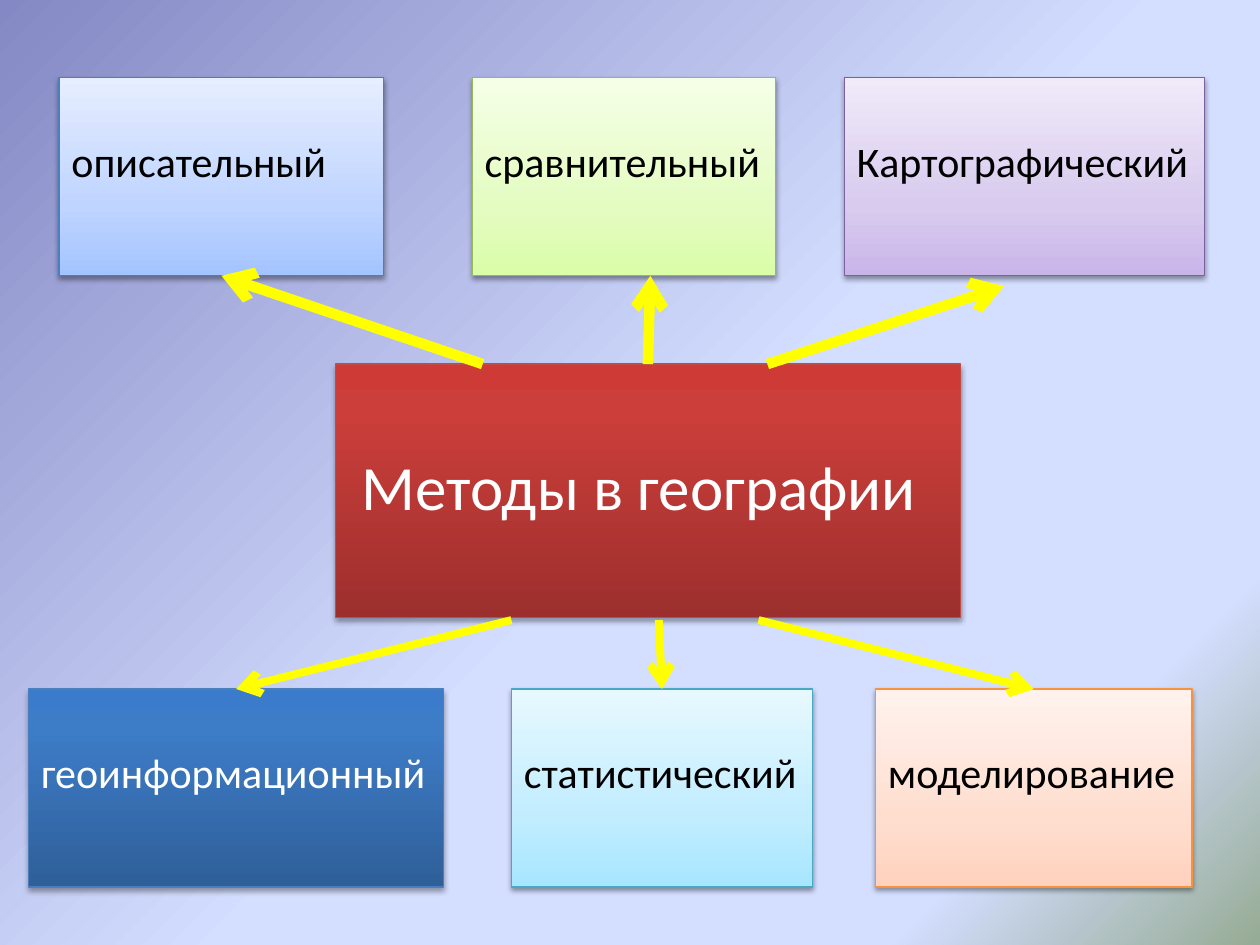
from dataclasses import dataclass

from pptx import Presentation
from pptx.dml.color import RGBColor
from pptx.enum import shapes, text
from pptx.oxml import ns
from pptx.oxml.xmlchemy import OxmlElement
from pptx.util import Cm, Pt


@dataclass(frozen=True)
class Style:
    """Colours of a box: gradient stops from bottom to top, outline and text."""
    stops: tuple
    line: str
    text: str = "000000"
    shadow: tuple = (38, 1.6)  # opacity in %, distance in points


@dataclass(frozen=True)
class Theme:
    font: str = "Calibri"
    hub_size: int = 36
    box_size: int = 24
    arrow: str = "FFFF00"
    background: tuple = ((0, "8488C4"), (53, "D4DEFF"), (83, "D4DEFF"), (100, "96AB94"))
    red: Style = Style(((0, "9C2F2D"), (80, "CB3E3A"), (100, "CE3B37")), "BF4C48", "FFFFFF", (35, 1.8))
    blue: Style = Style(((0, "2F5F99"), (80, "3D7CC7"), (100, "3A7CCB")), "4B7EBC", "FFFFFF", (35, 1.8))
    pale_blue: Style = Style(((0, "A4C4FF"), (35, "BFD4FF"), (100, "E6EEFF")), "4B7EBC")
    green: Style = Style(((0, "DAFDA7"), (35, "E4FCC2"), (100, "F5FFE7")), "98B955")
    violet: Style = Style(((0, "C9B5E8"), (35, "D8CBEE"), (100, "F0EAF9")), "7D60A0")
    cyan: Style = Style(((0, "A7E6FF"), (35, "C1EDFF"), (100, "E7F8FF")), "46AAC5")
    orange: Style = Style(((0, "FFD2BD"), (35, "FFDED0"), (100, "FFF2ED")), "F69240")


THEME = Theme()


def add_child(parent, tag, **attrs):
    child = OxmlElement(tag)
    for name, value in attrs.items():
        child.set(name, str(value))
    parent.append(child)
    return child


def set_gradient(fill, element, stops, angle):
    """Fill with any number of stops; the angle runs counter-clockwise."""
    fill.gradient()
    fill.gradient_angle = angle
    stop_list = next(element.iter(ns.qn("a:gsLst")))
    for old in list(stop_list):
        stop_list.remove(old)
    for position, color in stops:
        stop = add_child(stop_list, "a:gs", pos=position * 1000)
        add_child(stop, "a:srgbClr", val=color)


def set_shadow(sp, opacity, distance):
    sp.shadow.inherit = False
    effects = sp._element.spPr.find(ns.qn("a:effectLst"))
    outer = add_child(effects, "a:outerShdw", blurRad=Pt(3.1), dist=Pt(distance),
                      dir=90 * 60000, rotWithShape=0)
    color = add_child(outer, "a:srgbClr", val="000000")
    add_child(color, "a:alpha", val=opacity * 1000)


def add_box(slide, box, label, style, size, wrap=False):
    """Gradient rectangle whose text starts one line below its top."""
    sp = slide.shapes.add_shape(shapes.MSO_SHAPE.RECTANGLE, *map(Cm, box))
    set_gradient(sp.fill, sp._element, style.stops, 90)
    sp.line.color.rgb = RGBColor.from_string(style.line)
    sp.line.width = Pt(0.75)
    set_shadow(sp, *style.shadow)

    tf = sp.text_frame
    tf.word_wrap = wrap
    tf.vertical_anchor = text.MSO_ANCHOR.TOP
    tf.margin_top = Cm(0.13) + Pt(1.22 * size)
    p = tf.paragraphs[0]
    p.alignment = text.PP_ALIGN.LEFT
    r = p.add_run()
    r.text = label
    r.font.name = THEME.font
    r.font.size = Pt(size)
    r.font.color.rgb = RGBColor.from_string(style.text)
    return sp


def add_row(slide, top, height, methods):
    """Method boxes of one row; each method is left, width, label, style, wrap."""
    return [add_box(slide, (left, top, width, height), label, style, THEME.box_size, wrap)
            for left, width, label, style, wrap in methods]


def add_arrow(slide, start, end, width, source=None, target=None):
    """Arrow; source and target are (shape, side) pairs to join."""
    line = slide.shapes.add_connector(shapes.MSO_CONNECTOR.STRAIGHT, *map(Cm, start + end))
    if source:
        line.begin_connect(*source)
    if target:
        line.end_connect(*target)
    line.line.color.rgb = RGBColor.from_string(THEME.arrow)
    line.line.width = Pt(width)
    add_child(line.line._get_or_add_ln(), "a:tailEnd", type="arrow")
    add_child(line._element.spPr, "a:effectLst")


def build_methods_slide(prs):
    slide = prs.slides.add_slide(prs.slide_layouts[6])
    background = slide.background
    set_gradient(background.fill, slide._element, THEME.background, 315)

    hub = add_box(slide, (6.76, 7.34, 12.6, 5.11), " Методы в географии",
                  THEME.red, THEME.hub_size, wrap=True)
    upper = add_row(slide, 1.57, 3.99, [
        (1.19, 6.55, "описательный", THEME.pale_blue, True),
        (9.52, 6.12, "сравнительный", THEME.green, False),
        (17.02, 7.26, "Картографический", THEME.violet, False),
    ])
    lower = add_row(slide, 13.89, 3.99, [
        (0.58, 8.36, "геоинформационный", THEME.blue, False),
        (10.31, 6.07, "статистический", THEME.cyan, False),
        (17.65, 6.38, "моделирование", THEME.orange, False),
    ])

    add_arrow(slide, (9.73, 7.34), (4.47, 5.56), 6, target=(upper[0], 2))
    add_arrow(slide, (13.06, 7.34), (13.11, 5.56), 6, source=(hub, 0))
    add_arrow(slide, (15.47, 7.34), (20.24, 5.77), 6)
    for left, sp in zip((10.31, 13.28, 15.29), lower):
        add_arrow(slide, (left, 12.5), (left, 13.89), 4.5, target=(sp, 0))


def main():
    prs = Presentation()
    prs.slide_width, prs.slide_height = Cm(25.4), Cm(19.05)
    build_methods_slide(prs)
    prs.save("out.pptx")


if __name__ == "__main__":
    main()
